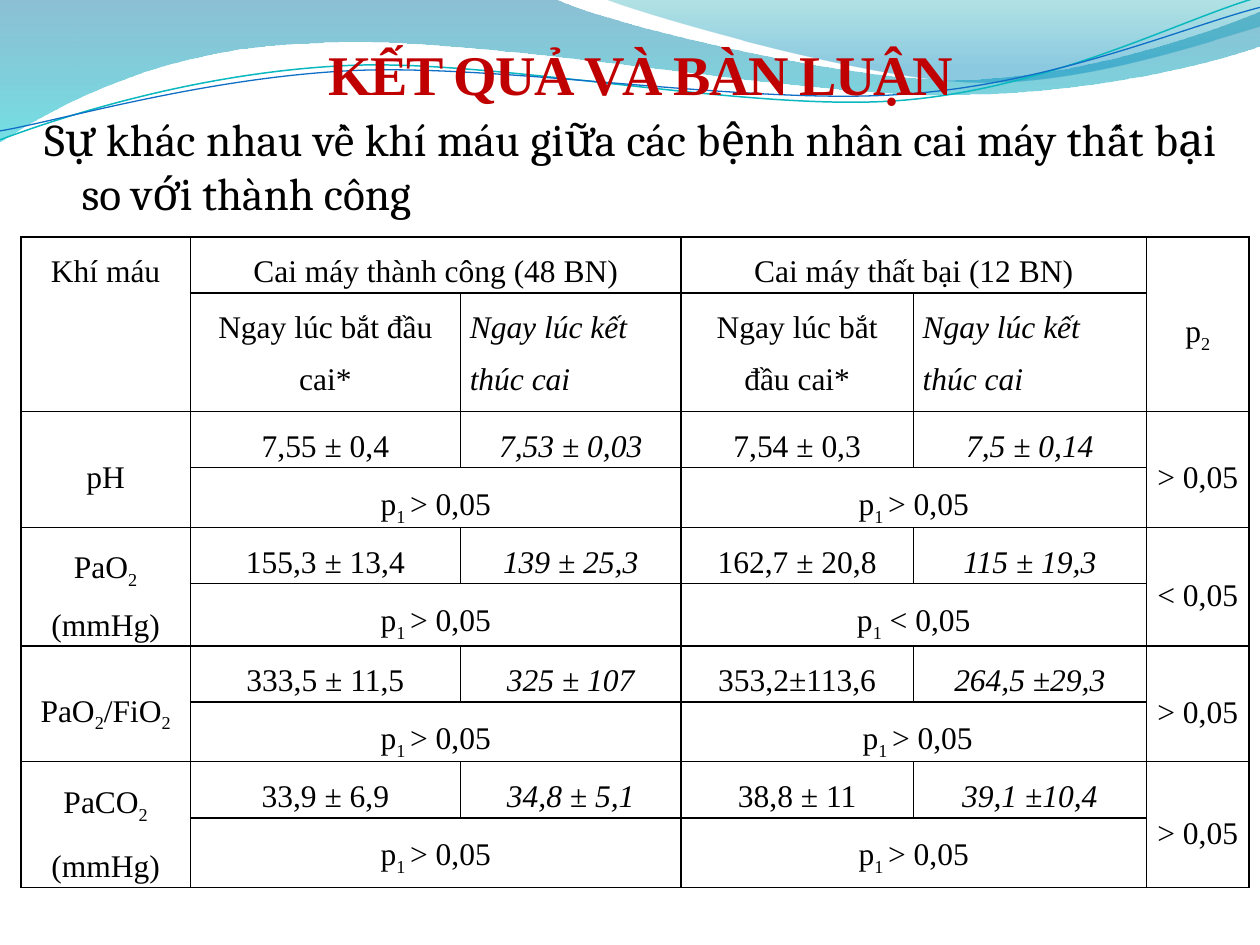
"""Build the slide comparing blood gases of patients weaned from ventilation."""
from pptx import Presentation
from pptx.dml.color import RGBColor
from pptx.enum.text import MSO_ANCHOR as Anchor, MSO_AUTO_SIZE as AutoSize, PP_ALIGN as Align
from pptx.oxml import parse_xml
from pptx.oxml.ns import nsdecls, qn
from pptx.oxml.xmlchemy import OxmlElement
from pptx.util import Cm, Pt

BLACK = RGBColor(0x00, 0x00, 0x00)
RED = RGBColor(0xC0, 0x00, 0x00)
DEEP_BLUE = RGBColor(0x00, 0x74, 0xA1)
CYAN = RGBColor(0x00, 0xC6, 0xCF)
TEAL = RGBColor(0x00, 0xA1, 0xA9)
SKY = RGBColor(0x00, 0x8B, 0xBF)
LINE_TEAL = RGBColor(0x0A, 0xB8, 0xBF)
LINE_BLUE = RGBColor(0x0F, 0x6F, 0xC6)

TITLE_FONT = {"name": "Times New Roman", "size": Pt(32), "bold": True}
BODY_FONT = {"name": "Cambria", "size": Pt(25.9)}
CELL_FONT = {"name": "Times New Roman", "size": Pt(18), "bold": False}
TITLE_PLACE = {"left": Cm(0.64), "top": Cm(0.64), "width": Cm(24.56), "height": Cm(1.52)}
BODY_PLACE = {"left": Cm(0.64), "top": Cm(2.11), "width": Cm(24.13), "height": Cm(2.34)}
TITLE_FRAME = {"margin_left": 0, "margin_right": 0, "margin_bottom": 0, "margin_top": Cm(0.13),
               "vertical_anchor": Anchor.BOTTOM, "auto_size": AutoSize.NONE, "word_wrap": True}
BODY_FRAME = {"vertical_anchor": Anchor.TOP, "auto_size": AutoSize.NONE, "word_wrap": True}
CELL_FRAME = {"margin_left": Cm(0.19), "margin_right": Cm(0.19), "margin_top": 0, "margin_bottom": 0}


def apply(target, values):
    """Set every attribute named in values on target."""
    for name, value in values.items():
        setattr(target, name, value)


def draw_path(shapes, start, steps, close):
    """Draw a freeform; one-point steps are lines, three-point steps are curves."""
    builder = shapes.build_freeform(Cm(start[0]), Cm(start[1]))
    builder.add_line_segments([(Cm(step[-1][0]), Cm(step[-1][1])) for step in steps], close=close)
    shape = builder.convert_to_shape()
    segments = list(shape.element.iter(qn("a:lnTo")))
    for segment, step in zip(segments, steps):
        if len(step) == 1:
            continue
        curve = OxmlElement("a:cubicBezTo")
        for x, y in step[:2]:
            control = OxmlElement("a:pt")
            control.set("x", str(Cm(x) - shape.left))
            control.set("y", str(Cm(y) - shape.top))
            curve.append(control)
        curve.append(segment[0])
        segment.getparent().replace(segment, curve)
    shape.shadow.inherit = False
    return shape


deck = Presentation()
deck.slide_width, deck.slide_height = Cm(25.4), Cm(19.05)
slide = deck.slides.add_slide(deck.slide_layouts[1])
title, body = slide.placeholders
tree = title.element.getparent()

waves = [
    ((0, 0), [[(11.18, -0.03)],
              [(12.09, 0.43), (16.87, 1.6), (19.25, 1.6)],
              [(21.67, 1.6), (24.33, 0.66), (25.4, 0.23)],
              [(25.43, 0.91)],
              [(24.97, 1.12), (22.1, 1.93), (18.95, 1.91)],
              [(15.8, 1.91), (9.7, 0.71), (6.53, 0.86)],
              [(3.28, 0.91), (1.17, 2.11), (-0.03, 2.87)],
              [(0, 0)]],
     [(0, DEEP_BLUE, 45), (1, CYAN, 55)]),
    ((12.17, -0.03), [[(12.93, 0.28), (17.32, 1.57), (19.53, 1.65)],
                      [(21.74, 1.75), (24.41, 0.81), (25.4, 0.53)],
                      [(25.4, 0)],
                      [(12.17, -0.03)]],
     [(0, TEAL, 30), (0.8, SKY, 45)]),
]
for start, steps, stops in waves:
    wave = draw_path(slide.shapes, start, steps, True)
    wave.line.fill.background()
    wave.fill.gradient()
    wave.fill.gradient_angle = 270
    for stop, (position, color, opacity) in zip(wave.fill.gradient_stops, stops):
        stop.position = position
        stop.color.rgb = color
    colors = wave.element.spPr.iter(qn("a:srgbClr"))
    for color, (position, rgb, opacity) in zip(colors, stops):
        alpha = OxmlElement("a:alpha")
        alpha.set("val", str(opacity * 1000))
        color.append(alpha)

strands = [
    ((0, 2.82), [[(1.22, 2.36), (4.01, 1.45), (7.04, 1.32)],
                 [(10.03, 1.19), (15.06, 2.26), (18.11, 2.03)],
                 [(21.16, 1.8), (23.83, 0.38), (25.35, -0.05)]], LINE_TEAL, 0.85),
    ((0, 2.64), [[(1.19, 2.44), (4.17, 1.55), (7.19, 1.42)],
                 [(10.24, 1.3), (15.16, 2.13), (18.21, 1.9)],
                 [(21.23, 1.7), (23.9, 0.53), (25.4, 0.15)]], LINE_BLUE, 0.75),
]
for start, steps, color, width in strands:
    strand = draw_path(slide.shapes, start, steps, False)
    strand.fill.background()
    strand.line.color.rgb = color
    strand.line.width = Pt(width)

tree.append(body.element)
apply(body, BODY_PLACE)
apply(body.text_frame, BODY_FRAME)
para = body.text_frame.paragraphs[0]
para.alignment = Align.JUSTIFY
indents = para._p.get_or_add_pPr()
indents.set("marL", str(Cm(0.75)))
indents.set("indent", str(-Cm(0.75)))
indents.append(OxmlElement("a:buNone"))
span = para.add_run()
span.text = "Sự khác nhau về khí máu giữa các bệnh nhân cai máy thất bại so với thành công"
apply(span.font, BODY_FONT)
span.font.color.rgb = BLACK

START, FINISH = "Ngay lúc bắt đầu cai*", "Ngay lúc kết thúc cai"
HIGHER = "p_1 _> 0,05"
rows = [
    ["Khí máu", "Cai máy thành công (48 BN)", "", "Cai máy thất bại (12 BN)", "", "p_2"],
    ["", START, FINISH, START, FINISH, ""],
    ["pH", "7,55 ± 0,4", "7,53 ± 0,03", "7,54 ± 0,3", "7,5 ± 0,14", "> 0,05"],
    ["", HIGHER, "", HIGHER, "", ""],
    ["PaO_2_ (mmHg)", "155,3 ± 13,4", "139 ± 25,3", "162,7 ± 20,8", "115 ± 19,3", "< 0,05"],
    ["", HIGHER, "", "p_1_ < 0,05", "", ""],
    ["PaO_2_/FiO_2", "333,5 ± 11,5", "325 ± 107", "353,2±113,6", "264,5 ±29,3", "> 0,05"],
    ["", HIGHER, "", " " + HIGHER, "", ""],
    ["PaCO_2\n(mmHg)", "33,9 ± 6,9", "34,8 ± 5,1", "38,8 ± 11", "39,1 ±10,4", "> 0,05"],
    ["", HIGHER, "", HIGHER, "", ""],
]
column_widths = [3.42, 5.44, 4.45, 4.68, 4.7, 2.07]
row_heights = [1.13, 2.39, 1.13, 1.13, 1.13, 1.26, 1.13, 1.13, 1.13, 1.41]
frame = slide.shapes.add_table(len(rows), len(column_widths), Cm(0.42), Cm(4.78),
                               Cm(sum(column_widths)), Cm(sum(row_heights)))
table = frame.table
apply(table, {"first_row": False, "horz_banding": False})
for column, width in zip(table.columns, column_widths):
    column.width = Cm(width)
for row, height in zip(table.rows, row_heights):
    row.height = Cm(height)

for top in range(0, len(rows), 2):
    for column in (0, 5):
        table.cell(top, column).merge(table.cell(top + 1, column))
for row in (0, 3, 5, 7, 9):
    for column in (1, 3):
        table.cell(row, column).merge(table.cell(row, column + 1))

for r, texts in enumerate(rows):
    for c, text in enumerate(texts):
        cell = table.cell(r, c)
        apply(cell, CELL_FRAME)
        cell.fill.background()
        properties = cell._tc.get_or_add_tcPr()
        for index, side in enumerate(("lnL", "lnR", "lnT", "lnB")):
            properties.insert(index, parse_xml(
                f'<a:{side} {nsdecls("a")} w="{Pt(1)}"><a:solidFill>'
                f'<a:srgbClr val="{BLACK}"/></a:solidFill></a:{side}>'))
        if not text:
            continue
        if c == 5 or (c == 0 and r > 0):
            cell.vertical_anchor = Anchor.MIDDLE
        for number, line in enumerate(text.split("\n")):
            para = cell.text_frame.add_paragraph() if number else cell.text_frame.paragraphs[0]
            para.alignment = Align.LEFT if r == 1 and c in (2, 4) else Align.CENTER
            para.line_spacing = 1.5
            para.space_before = Pt(4 if r > 1 else 0)
            for part, piece in enumerate(line.split("_")):
                span = para.add_run()
                span.text = piece
                apply(span.font, CELL_FONT)
                span.font.italic = c in (2, 4)
                span.font.color.rgb = BLACK
                if part % 2:
                    span._r.get_or_add_rPr().set("baseline", "-25000")

tree.append(title.element)
apply(title, TITLE_PLACE)
apply(title.text_frame, TITLE_FRAME)
para = title.text_frame.paragraphs[0]
para.alignment = Align.CENTER
span = para.add_run()
span.text = "KẾT QUẢ VÀ BÀN LUẬN"
apply(span.font, TITLE_FONT)
span.font.color.rgb = RED
span._r.get_or_add_rPr().set("spc", "-100")

deck.save("out.pptx")
